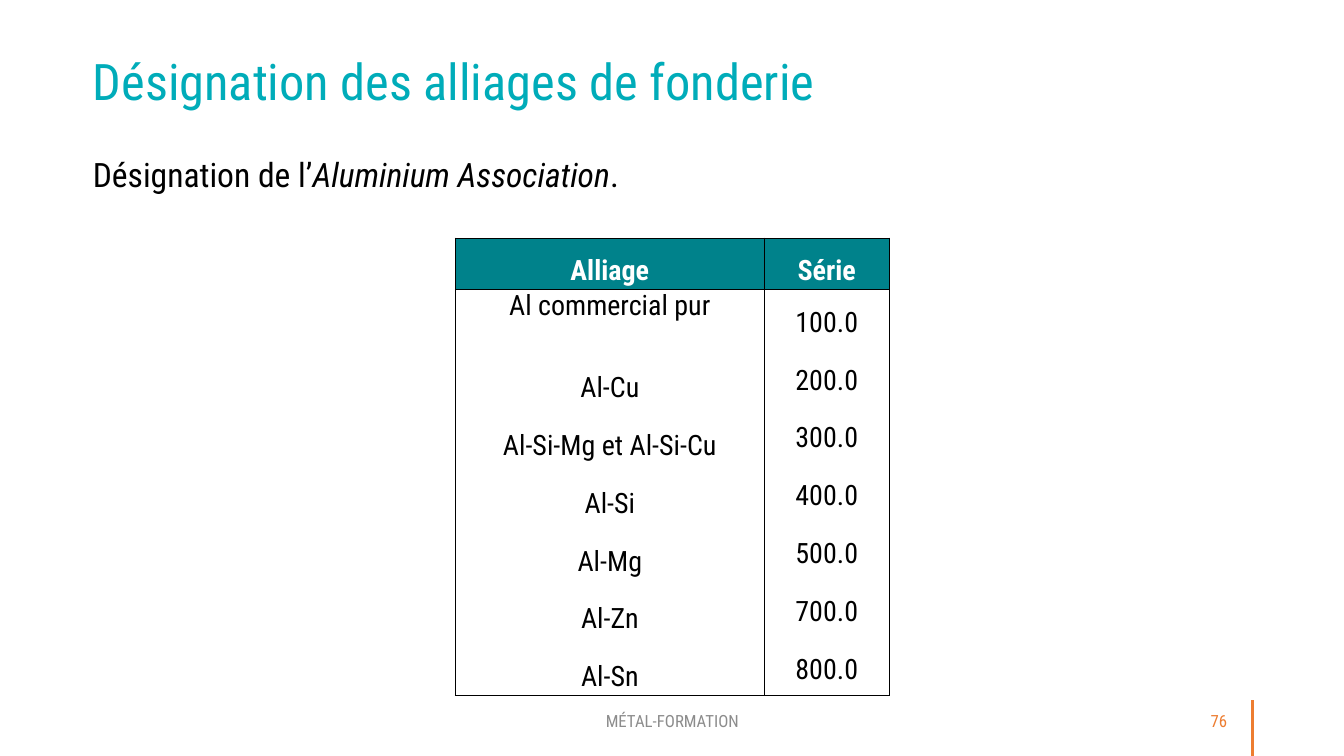
from collections import namedtuple

from lxml import etree
from pptx import Presentation
from pptx import util as u
from pptx.dml.color import RGBColor
from pptx.enum import shapes, text
from pptx.oxml.ns import qn

FONT = "Roboto Condensed"
COLOURS = {
    "title": "00ACB9",
    "header": "00828B",
    "accent": "ED7D31",
    "footer": "8C8C8C",
    "black": "000000",
    "white": "FFFFFF",
}
ALLOYS = ["Al commercial pur", "Al-Cu", "Al-Si-Mg et Al-Si-Cu", "Al-Si", "Al-Mg", "Al-Zn", "Al-Sn"]
SERIES = ["100.0", "200.0", "300.0", "400.0", "500.0", "700.0", "800.0"]
Box = namedtuple("Box", "left top width height")


def colour(name):
    return RGBColor.from_string(COLOURS[name])


def add_run(paragraph, words, size, colour_name, bold=False, italic=False):
    run = paragraph.add_run()
    run.text = words
    font = run.font
    font.name, font.size = FONT, u.Pt(size)
    font.bold, font.italic = bold, italic
    font.color.rgb = colour(colour_name)


def place(shape, box):
    shape.left, shape.top, shape.width, shape.height = (u.Cm(length) for length in box)


def prepare_frame(frame, anchor, margin=None):
    frame.word_wrap = True
    frame.auto_size = text.MSO_AUTO_SIZE.NONE
    frame.vertical_anchor = anchor
    if margin is not None:
        frame.margin_left = frame.margin_right = u.Cm(margin)
        frame.margin_top = frame.margin_bottom = u.Cm(margin)
    return frame.paragraphs[0]


def add_text_box(slide, box, anchor, margin=None):
    shape = slide.shapes.add_textbox(*(u.Cm(length) for length in box))
    return prepare_frame(shape.text_frame, anchor, margin)


# Title and introductory sentence
def add_heading(slide, box):
    title = slide.shapes.title
    place(title, Box(box.left, box.top, box.width, 2.57))
    paragraph = prepare_frame(title.text_frame, text.MSO_ANCHOR.TOP, 0)
    paragraph.alignment = text.PP_ALIGN.LEFT
    paragraph.line_spacing = 0.9
    add_run(paragraph, "Désignation des alliages de fonderie", 36, "title")

    sentence_box = Box(box.left, box.top + 2.57, box.width, box.height - 2.57)
    paragraph = add_text_box(slide, sentence_box, text.MSO_ANCHOR.TOP, 0)
    paragraph.line_spacing = 0.9
    add_run(paragraph, "Désignation de l’", 24, "black")
    add_run(paragraph, "Aluminium Association", 24, "black", italic=True)
    add_run(paragraph, ".", 24, "black")


def add_borders(cell):
    properties = cell._tc.get_or_add_tcPr()
    for position, side in enumerate(("lnL", "lnR", "lnT", "lnB")):
        line = etree.Element(qn(f"a:{side}"), w=str(u.Pt(1)))
        fill = etree.SubElement(line, qn("a:solidFill"))
        etree.SubElement(fill, qn("a:srgbClr"), val=COLOURS["black"])
        properties.insert(position, line)


def fill_cell(cell, lines, fill_name, colour_name, bold=False):
    cell.margin_left = cell.margin_right = u.Cm(0.36)
    cell.margin_top = cell.margin_bottom = 0
    cell.fill.solid()
    cell.fill.fore_color.rgb = colour(fill_name)
    add_borders(cell)
    frame = cell.text_frame
    for index, words in enumerate(lines):
        paragraph = frame.add_paragraph() if index else frame.paragraphs[0]
        paragraph.alignment = text.PP_ALIGN.CENTER
        paragraph.line_spacing = 1.5
        if index:
            paragraph.space_before = u.Pt(6)
        add_run(paragraph, words, 20, colour_name, bold)


# Table of alloys and series
def add_alloy_table(slide, box):
    frame = slide.shapes.add_table(2, 2, *(u.Cm(length) for length in box))
    table = frame.table
    table.first_row = table.horz_banding = False
    header_height, series_width = 1.3, 3.15
    table.columns[0].width = u.Cm(box.width - series_width)
    table.columns[1].width = u.Cm(series_width)
    table.rows[0].height = u.Cm(header_height)
    table.rows[1].height = u.Cm(box.height - header_height)

    for column, (heading, lines) in enumerate((("Alliage", ALLOYS), ("Série", SERIES))):
        fill_cell(table.cell(0, column), [heading], "header", "white", bold=True)
        fill_cell(table.cell(1, column), lines, "white", "black")

    # The first two alloys are single spaced, with a wide gap between them
    pure, copper = table.cell(1, 0).text_frame.paragraphs[:2]
    pure.line_spacing = copper.line_spacing = 1.0
    copper.space_before = u.Pt(35)


# Footer, page number and accent line
def add_footer(slide, box):
    labels = (
        ("MÉTAL-FORMATION", 0, 11.43, text.PP_ALIGN.CENTER, "footer"),
        ("76", 16.6, 3.35, text.PP_ALIGN.RIGHT, "accent"),
    )
    for words, offset, width, alignment, colour_name in labels:
        label_box = Box(box.left + offset, box.top, width, 1.02)
        paragraph = add_text_box(slide, label_box, text.MSO_ANCHOR.MIDDLE)
        paragraph.alignment = alignment
        add_run(paragraph, words, 12, colour_name)

    x = u.Cm(box.left + box.width)
    line = slide.shapes.add_connector(
        shapes.MSO_CONNECTOR.STRAIGHT, x, u.Cm(box.top + box.height), x, u.Cm(box.top)
    )
    line.line.color.rgb = colour("accent")
    line.line.width = u.Pt(2.25)
    etree.SubElement(line._element.spPr, qn("a:effectLst"))


def main():
    presentation = Presentation()
    presentation.slide_width, presentation.slide_height = u.Cm(33.87), u.Cm(19.05)
    slide = presentation.slides.add_slide(presentation.slide_layouts[5])
    add_heading(slide, Box(2.34, 1.43, 29.2, 4))
    add_alloy_table(slide, Box(11.48, 6, 10.93, 11.53))
    add_footer(slide, Box(11.23, 17.65, 20.33, 1.4))
    presentation.save("out.pptx")


if __name__ == "__main__":
    main()
